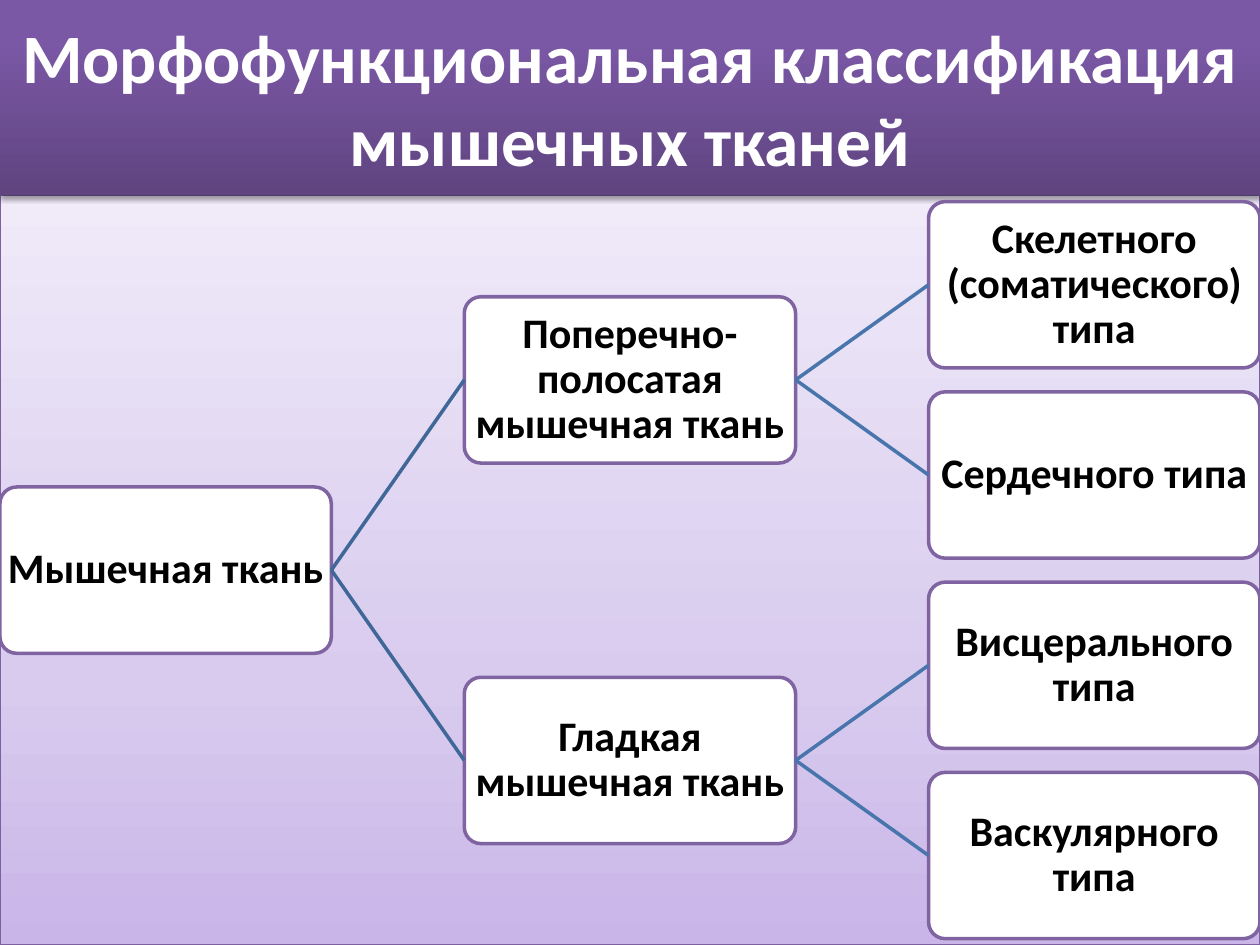
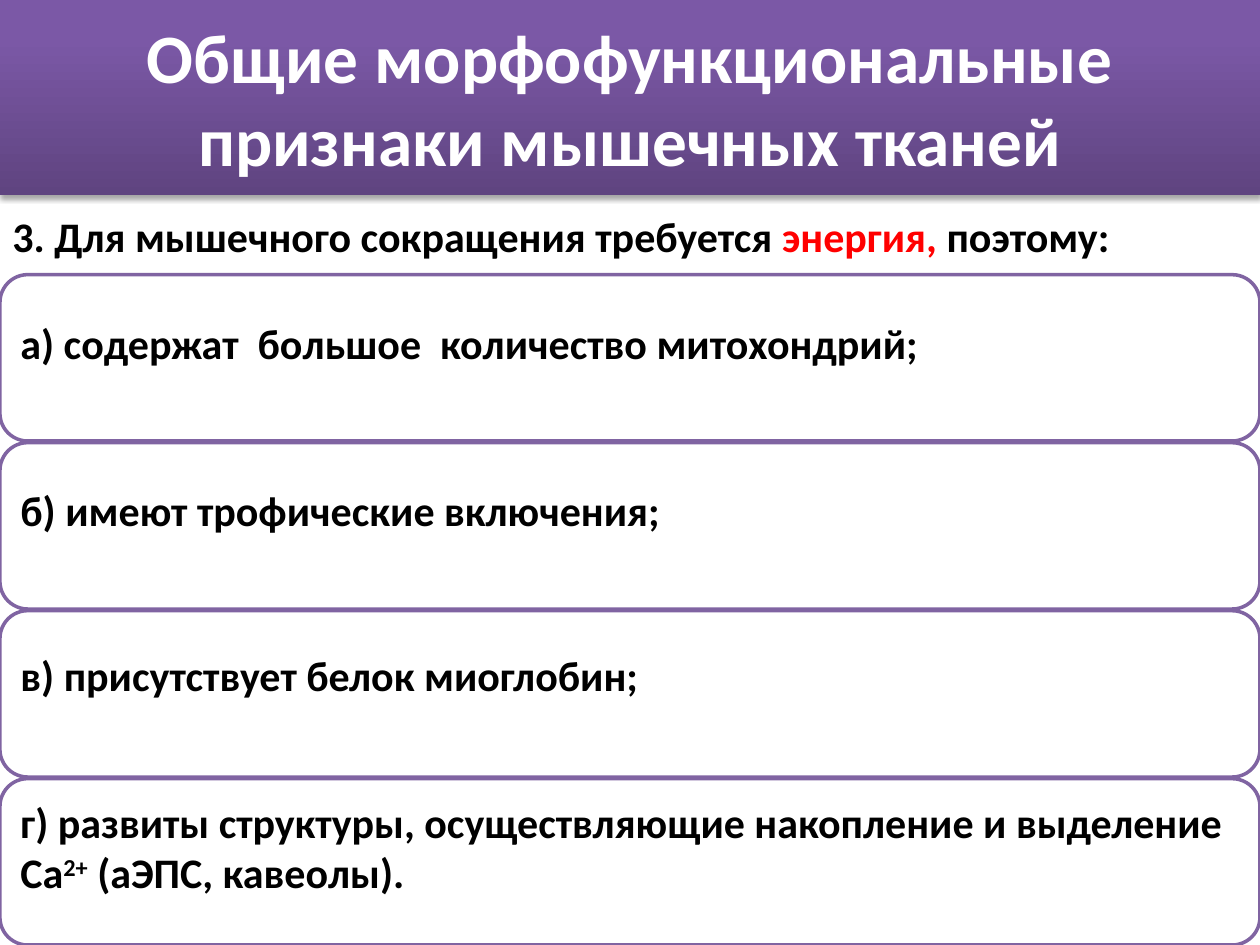
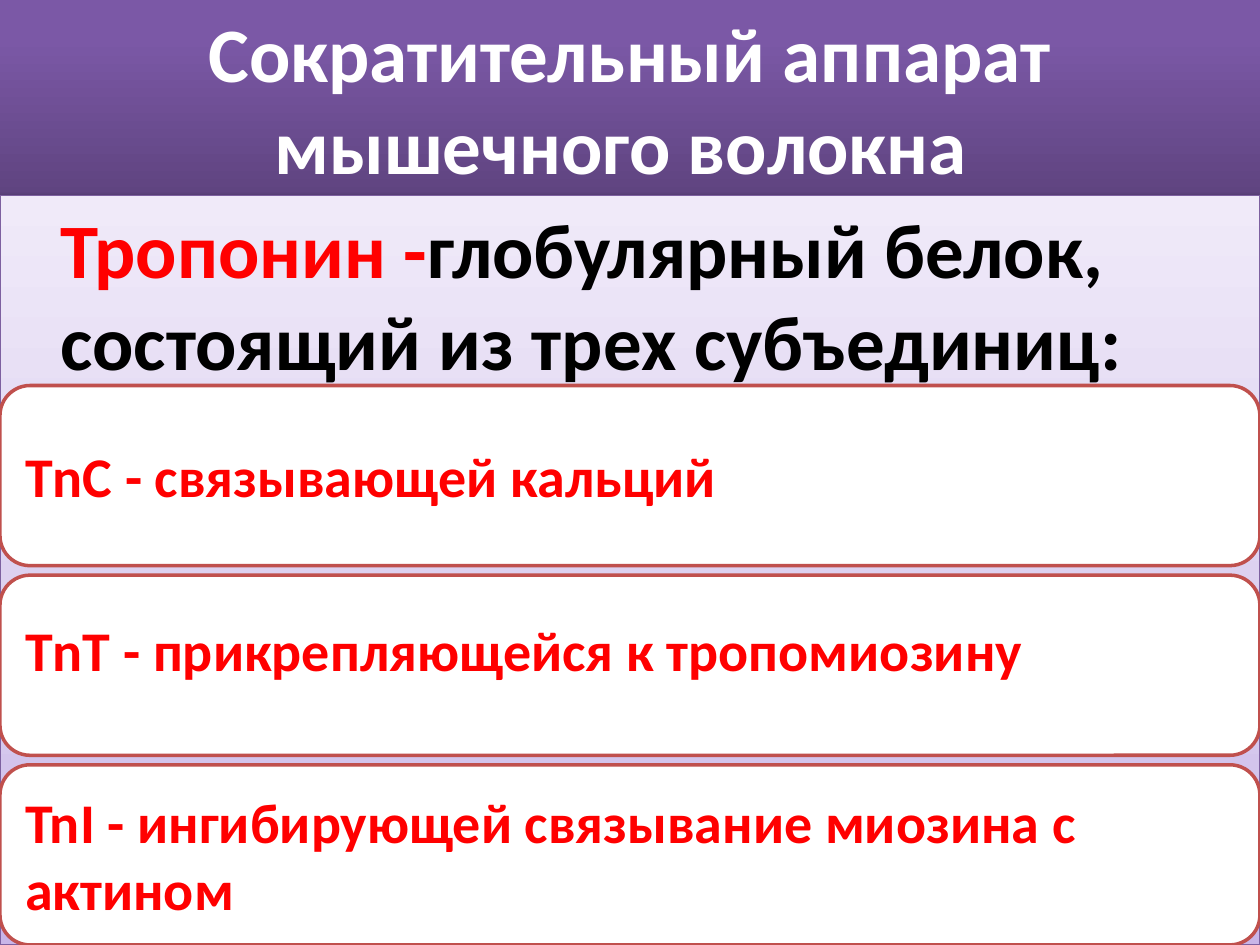
from dataclasses import dataclass

from lxml.etree import SubElement
from pptx import Presentation
from pptx.dml.color import RGBColor
from pptx.enum.shapes import MSO_CONNECTOR, MSO_SHAPE
from pptx.enum.text import MSO_ANCHOR, PP_ALIGN
from pptx.oxml.ns import qn
from pptx.util import Inches, Pt


@dataclass(frozen=True)
class Theme:
    font: str = "Calibri"
    white: str = "FFFFFF"
    black: str = "000000"
    red: str = "FF0000"
    violet: str = "8064A2"
    brick: str = "C0504D"
    panel_edge: str = "7D60A0"
    branch_colors: tuple = ("3F6797", "4875AC")
    title_gradient: tuple = ((0, "5F4480"), (80, "7B58A6"), (100, "7C57A8"))
    panel_gradient: tuple = ((0, "C9B5E8"), (35, "D8CBEE"), (100, "F0EAF9"))
    title_size: float = 39.6
    big_size: float = 44
    item_size: float = 32
    text_size: float = 24
    outline: float = 2


THEME = Theme()
WIDTH, HEIGHT = 10, 7.5
BAND = 1.55                     # height of the title band
BOX_W, BOX_H = 2.63, 1.32       # box of the classification tree
LEAF_TOP, LEAF_STEP = 1.6, 1.51
COLUMN_STEP = (WIDTH - BOX_W) / 2

# Each node: text and its branches
CLASSIFICATION = ("Мышечная ткань", [
    ("Поперечно-полосатая мышечная ткань", [
        ("Скелетного (соматического) типа", []),
        ("Сердечного типа", []),
    ]),
    ("Гладкая мышечная ткань", [
        ("Висцерального типа", []),
        ("Васкулярного типа", []),
    ]),
])

# Each row: runs and the free space kept below the text
ENERGY_FEATURES = [
    ([("а) содержат  большое  количество митохондрий;", {})], 0.24),
    ([("б) имеют трофические включения;", {})], 0.25),
    ([("в) присутствует белок миоглобин;", {})], 0.3),
    ([("г) развиты структуры, осуществляющие накопление и выделение Са", {}),
      ("2+", {"raised": True}), (" (аЭПС, кавеолы).", {})], 0.24),
]
TROPONIN_SUBUNITS = [
    ([("ТnС - связывающей кальций", {})], 0),
    ([("ТnТ - прикрепляющейся к тропомиозину", {})], 0.25),
    ([("TnI - ингибирующей связывание миозина с актином", {})], 0),
]


# Text
def add_run(paragraph, text, size, color, raised=False):
    run = paragraph.add_run()
    run.text = text
    run.font.name = THEME.font
    run.font.size = Pt(size)
    run.font.bold = True
    run.font.color.rgb = RGBColor.from_string(color)
    if raised:
        run._r.get_or_add_rPr().set("baseline", "30000")


def write(shape, content, size=THEME.text_size, color=THEME.black,
          align=PP_ALIGN.LEFT, anchor=MSO_ANCHOR.MIDDLE, spacing=None,
          insets=(0.1, 0.05, 0.1, 0.05)):
    """Content is a string or a list of (text, run format) pairs."""
    frame = shape.text_frame
    frame.word_wrap = True
    frame.vertical_anchor = anchor
    (frame.margin_left, frame.margin_top,
     frame.margin_right, frame.margin_bottom) = map(Inches, insets)
    paragraph = frame.paragraphs[0]
    paragraph.alignment = align
    if spacing:
        paragraph.line_spacing = spacing
    runs = [(content, {})] if isinstance(content, str) else content
    for text, changes in runs:
        for number, line in enumerate(text.split("\n")):
            if number:
                paragraph.add_line_break()
            add_run(paragraph, line, **{"size": size, "color": color, **changes})


# Surfaces
def add_block(slide, kind, left, top, width, height):
    block = slide.shapes.add_shape(kind, *map(Inches, (left, top, width, height)))
    block.shadow.inherit = False
    return block


def set_outline(shape, color, width=THEME.outline):
    shape.line.color.rgb = RGBColor.from_string(color)
    shape.line.width = Pt(width)


def fill_upward(shape, stops):
    """Gradient that runs from the bottom edge to the top one."""
    shape.fill.gradient()
    shape.fill.gradient_angle = 90
    stop_list = shape._element.spPr.find(".//" + qn("a:gsLst"))
    stop_list.clear()
    for position, color in stops:
        stop = SubElement(stop_list, qn("a:gs"), pos=str(position * 1000))
        SubElement(stop, qn("a:srgbClr"), val=color)


def drop_shadow(shape, opacity, distance):
    effects = shape._element.spPr.find(qn("a:effectLst"))
    shadow = SubElement(effects, qn("a:outerShdw"), blurRad=str(Pt(3.1)),
                        dist=str(Pt(distance)), dir="5400000", rotWithShape="0")
    color = SubElement(shadow, qn("a:srgbClr"), val=THEME.black)
    SubElement(color, qn("a:alpha"), val=str(opacity * 1000))


def add_title(slide, text, size=THEME.title_size):
    band = add_block(slide, MSO_SHAPE.RECTANGLE, 0, 0, WIDTH, BAND)
    fill_upward(band, THEME.title_gradient)
    band.line.fill.background()
    drop_shadow(band, 35, 1.8)
    write(band, text, size=size, color=THEME.white, align=PP_ALIGN.CENTER)


def add_panel(slide):
    panel = add_block(slide, MSO_SHAPE.RECTANGLE, 0, BAND, WIDTH, HEIGHT - BAND)
    fill_upward(panel, THEME.panel_gradient)
    set_outline(panel, THEME.panel_edge, 0.75)
    drop_shadow(panel, 38, 1.6)
    return panel


def add_card(slide, left, top, width, height, edge=THEME.violet):
    card = add_block(slide, MSO_SHAPE.ROUNDED_RECTANGLE, left, top, width, height)
    card.fill.solid()
    card.fill.fore_color.rgb = RGBColor.from_string(THEME.white)
    set_outline(card, edge)
    return card


def add_card_rows(slide, rows, top, height, edge, side_inset, **text_format):
    """Full-width cards at equal steps from top down to the slide's foot."""
    step = (HEIGHT - height - top) / (len(rows) - 1)
    for number, (content, space_below) in enumerate(rows):
        card = add_card(slide, 0, top + number * step, WIDTH, height, edge)
        write(card, content, insets=(side_inset, 0, side_inset, space_below),
              **text_format)


# Classification tree
def add_branch(slide, parent, child, color):
    branch = slide.shapes.add_connector(MSO_CONNECTOR.STRAIGHT, 0, 0, 0, 0)
    branch.begin_connect(parent, 3)
    branch.end_connect(child, 1)
    set_outline(branch, color)
    SubElement(branch._element.spPr, qn("a:effectLst"))


def add_tree(slide, node, level=0, first_leaf=0):
    """Draw a node and its branches; return its box, row and leaf count."""
    text, children = node
    branches, leaves = [], 0
    for child in children:
        box, row, count = add_tree(slide, child, level + 1, first_leaf + leaves)
        branches.append((box, row))
        leaves += count
    row = (branches[0][1] + branches[-1][1]) / 2 if branches else first_leaf
    box = add_card(slide, level * COLUMN_STEP, LEAF_TOP + row * LEAF_STEP,
                   BOX_W, BOX_H)
    box.adjustments[0] = 0.1
    write(box, text, align=PP_ALIGN.CENTER, spacing=0.9, insets=(0.02,) * 4)
    for child_box, _ in branches:
        add_branch(slide, box, child_box, THEME.branch_colors[level])
    return box, row, max(leaves, 1)


# Slides
def classification_slide(slide):
    add_panel(slide)
    add_title(slide, "Морфофункциональная классификация\nмышечных тканей")
    add_tree(slide, CLASSIFICATION)


def energy_slide(slide):
    add_title(slide, "Общие морфофункциональные признаки мышечных тканей")
    add_card_rows(slide, ENERGY_FEATURES, 2.18, BOX_H, THEME.violet, 0.1)
    lead = slide.shapes.add_textbox(0, Inches(1.62), Inches(WIDTH), Inches(0.5))
    write(lead, [("3. Для мышечного сокращения требуется ", {}),
                 ("энергия,", {"color": THEME.red}), (" поэтому:", {})],
          anchor=MSO_ANCHOR.TOP)


def troponin_slide(slide):
    add_title(slide, "Сократительный аппарат мышечного волокна ", THEME.big_size)
    write(add_panel(slide),
          [("Тропонин -", {"color": THEME.red}),
           ("глобулярный белок, состоящий из трех субъединиц:", {})],
          size=THEME.big_size, anchor=MSO_ANCHOR.TOP,
          insets=(0.48, 0.05, 0.1, 0.05))
    add_card_rows(slide, TROPONIN_SUBUNITS, 3.06, 1.43, THEME.brick, 0.13,
                  size=THEME.item_size, color=THEME.red)


def main():
    deck = Presentation()
    deck.slide_width, deck.slide_height = Inches(WIDTH), Inches(HEIGHT)
    blank = deck.slide_layouts[6]
    for build in (classification_slide, energy_slide, troponin_slide):
        build(deck.slides.add_slide(blank))
    deck.save("out.pptx")


if __name__ == "__main__":
    main()
